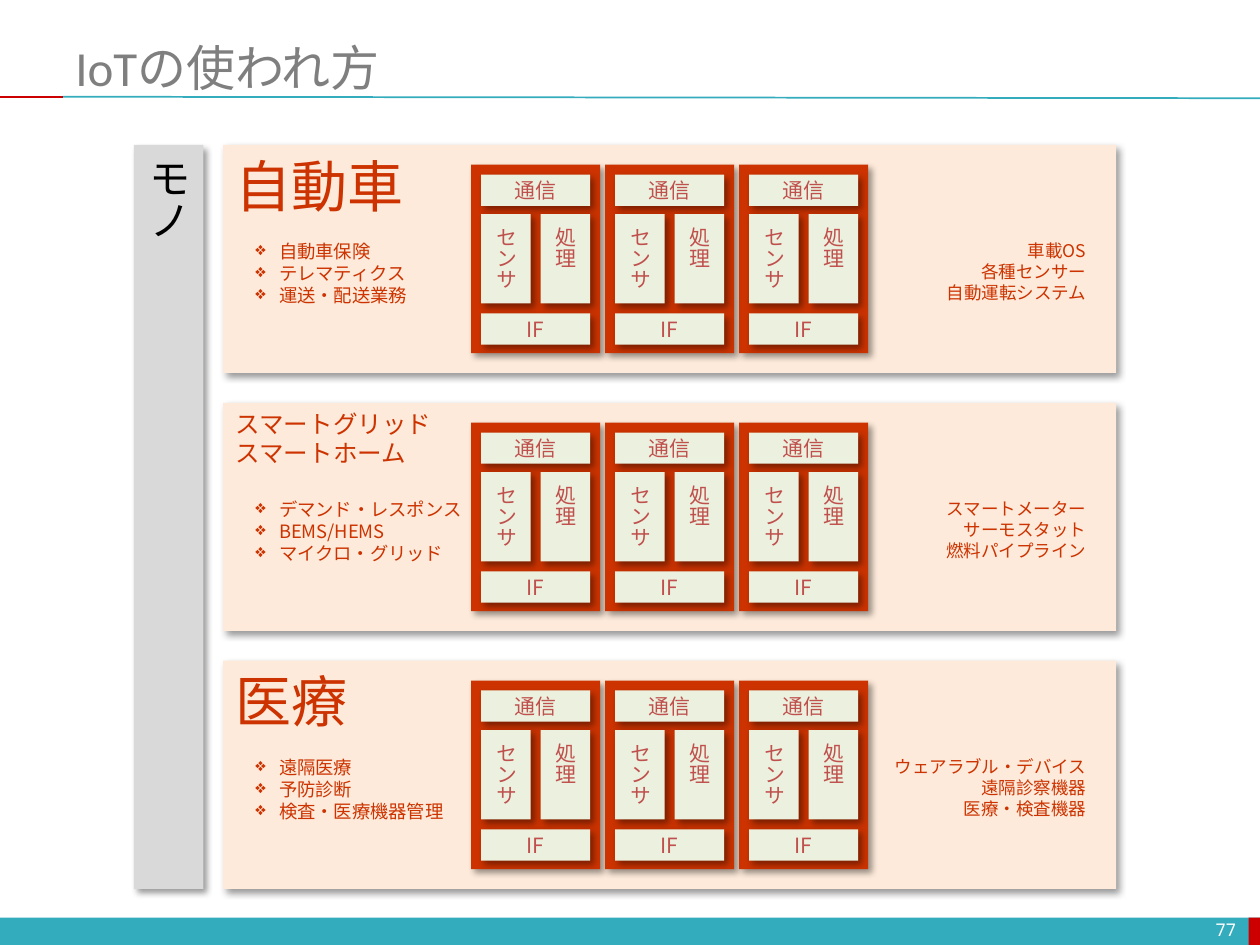
from dataclasses import dataclass

from lxml.etree import SubElement
from pptx import Presentation
from pptx.dml.color import RGBColor
from pptx.enum.shapes import MSO_CONNECTOR, MSO_SHAPE
from pptx.enum.text import MSO_ANCHOR, PP_ALIGN
from pptx.oxml.ns import qn
from pptx.util import Cm, Pt

TITLE = "IoTの使われ方"
THINGS = "モノ"
PAGE_NUMBER = "77"

FIELDS = [
    {
        "heading": ["自動車"], "heading_size": 32,
        "services": ["自動車保険", "テレマティクス", "運送・配送業務"],
        "devices": ["車載OS", "各種センサー", "自動運転システム"],
    },
    {
        "heading": ["スマートグリッド", "スマートホーム"], "heading_size": 14,
        "services": ["デマンド・レスポンス", "BEMS/HEMS", "マイクロ・グリッド"],
        "devices": ["スマートメーター", "サーモスタット", "燃料パイプライン"],
    },
    {
        "heading": ["医療"], "heading_size": 32,
        "services": ["遠隔医療", "予防診断", "検査・医療機器管理"],
        "devices": ["ウェアラブル・デバイス", "遠隔診察機器", "医療・検査機器"],
    },
]

MODULE_PARTS = [
    ("通信", (0.2, 0.2, 2.2, 0.63), False),
    ("センサ", (0.2, 1.0, 1.0, 1.8), True),
    ("処理", (1.4, 1.0, 1.0, 1.8), True),
    ("IF", (0.2, 3.0, 2.2, 0.63), False),
]
MODULE_COUNT = 3

PANEL_LEFT, PANEL_TOP, PANEL_WIDTH, PANEL_HEIGHT, PANEL_PITCH = 4.5, 2.92, 18.0, 4.6, 5.2
MODULE_LEFT, MODULE_WIDTH, MODULE_HEIGHT, MODULE_PITCH = 9.5, 2.6, 3.8, 2.7
MODULE_DROP, DETAIL_DROP = 0.4, 1.8


@dataclass(frozen=True)
class Theme:
    teal: str = "33ACBD"
    red: str = "CC0000"
    title_grey: str = "7F7F7F"
    bar_grey: str = "D9D9D9"
    peach: str = "FDEADA"
    orange: str = "CC3300"
    pale_green: str = "EBF1DE"
    part_text: str = "C0504D"
    black: str = "000000"
    white: str = "FFFFFF"
    title_font: str = "Calibri"
    body_font: str = "Noto Sans CJK JP"
    number_font: str = "Noto Sans Mono"
    title_size: float = 28
    things_size: float = 24
    part_size: float = 12
    service_size: float = 10.5
    small_size: float = 10


THEME = Theme()


def cast_shadow(shape):
    effects = shape._element.spPr.find(qn("a:effectLst"))
    shadow = SubElement(effects, qn("a:outerShdw"), blurRad=str(Pt(4)), dist=str(Pt(3)),
                        dir="2700000", algn="tl", rotWithShape="0")
    color = SubElement(shadow, qn("a:srgbClr"), val=THEME.black)
    SubElement(color, qn("a:alpha"), val="40000")


def add_block(page, area, fill, shadow=True):
    block = page.shapes.add_shape(MSO_SHAPE.RECTANGLE, *(Cm(length) for length in area))
    block.fill.solid()
    block.fill.fore_color.rgb = RGBColor.from_string(fill)
    block.line.fill.background()
    block.shadow.inherit = False
    if shadow:
        cast_shadow(block)
    return block


def add_rule(page, ends, color):
    rule = page.shapes.add_connector(MSO_CONNECTOR.STRAIGHT, *(Cm(length) for length in ends))
    rule.line.color.rgb = RGBColor.from_string(color)
    rule.line.width = Pt(1)
    SubElement(rule._element.spPr, qn("a:effectLst"))


def add_bullet(para):
    properties = para._p.get_or_add_pPr()
    properties.set("marL", str(Cm(0.48)))
    properties.set("indent", str(-Cm(0.48)))
    SubElement(properties, qn("a:buChar"), char="❖")


def write(box, lines, size, color, font=THEME.body_font, align=PP_ALIGN.LEFT,
          anchor=MSO_ANCHOR.TOP, bullets=False):
    frame = box.text_frame
    frame.word_wrap = True
    frame.vertical_anchor = anchor
    for index, line in enumerate(lines):
        para = frame.paragraphs[0] if index == 0 else frame.add_paragraph()
        para.alignment = align
        if bullets:
            add_bullet(para)
        span = para.add_run()
        span.text = line
        span.font.size = Pt(size)
        span.font.name = font
        span.font.color.rgb = RGBColor.from_string(color)
        SubElement(span._r.get_or_add_rPr(), qn("a:ea"), typeface=THEME.body_font)


def add_text(page, area, lines, size, color, **style):
    box = page.shapes.add_textbox(*(Cm(length) for length in area))
    write(box, lines, size, color, **style)


def label_block(block, text, size, color, vertical):
    frame = block.text_frame
    frame.margin_left = frame.margin_right = 0
    if vertical:
        frame._txBody.bodyPr.set("vert", "eaVert")
    align = PP_ALIGN.LEFT if vertical else PP_ALIGN.CENTER
    write(block, [text], size, color, align=align, anchor=MSO_ANCHOR.MIDDLE)


def add_module(page, left, top):
    add_block(page, (left, top, MODULE_WIDTH, MODULE_HEIGHT), THEME.orange)
    for text, (x, y, width, height), vertical in MODULE_PARTS:
        part = add_block(page, (left + x, top + y, width, height), THEME.pale_green)
        label_block(part, text, THEME.part_size, THEME.part_text, vertical)


def add_field(page, field, top):
    add_block(page, (PANEL_LEFT, top, PANEL_WIDTH, PANEL_HEIGHT), THEME.peach)
    for index in range(MODULE_COUNT):
        add_module(page, MODULE_LEFT + index * MODULE_PITCH, top + MODULE_DROP)
    add_text(page, (PANEL_LEFT, top, 4.9, 1.6), field["heading"],
             field["heading_size"], THEME.orange)
    add_text(page, (4.9, top + DETAIL_DROP, 4.9, 1.6), field["services"],
             THEME.service_size, THEME.orange, bullets=True)
    add_text(page, (17.7, top + DETAIL_DROP, 4.44, 1.55), field["devices"],
             THEME.small_size, THEME.orange, align=PP_ALIGN.RIGHT)


def main():
    deck = Presentation()
    deck.slide_width, deck.slide_height = Cm(25.4), Cm(19.05)
    page = deck.slides.add_slide(deck.slide_layouts[6])

    add_block(page, (0, 18.5, 25.4, 0.55), THEME.teal, shadow=False)
    add_block(page, (25.17, 18.5, 0.23, 0.55), THEME.red, shadow=False)
    add_rule(page, (1.27, 1.95, 25.4, 1.98), THEME.teal)
    add_rule(page, (0, 1.95, 1.27, 1.95), THEME.red)
    add_text(page, (1.27, 0.76, 24.13, 1.17), [TITLE], THEME.title_size, THEME.title_grey,
             font=THEME.title_font, anchor=MSO_ANCHOR.MIDDLE)

    bar_height = PANEL_PITCH * (len(FIELDS) - 1) + PANEL_HEIGHT
    bar = add_block(page, (2.7, PANEL_TOP, 1.4, bar_height), THEME.bar_grey)
    label_block(bar, THINGS, THEME.things_size, THEME.black, vertical=True)

    for index, field in enumerate(FIELDS):
        add_field(page, field, PANEL_TOP + index * PANEL_PITCH)

    add_text(page, (19.25, 18.44, 5.92, 0.61), [PAGE_NUMBER], THEME.small_size, THEME.white,
             font=THEME.number_font, align=PP_ALIGN.RIGHT, anchor=MSO_ANCHOR.MIDDLE)
    deck.save("out.pptx")


if __name__ == "__main__":
    main()
